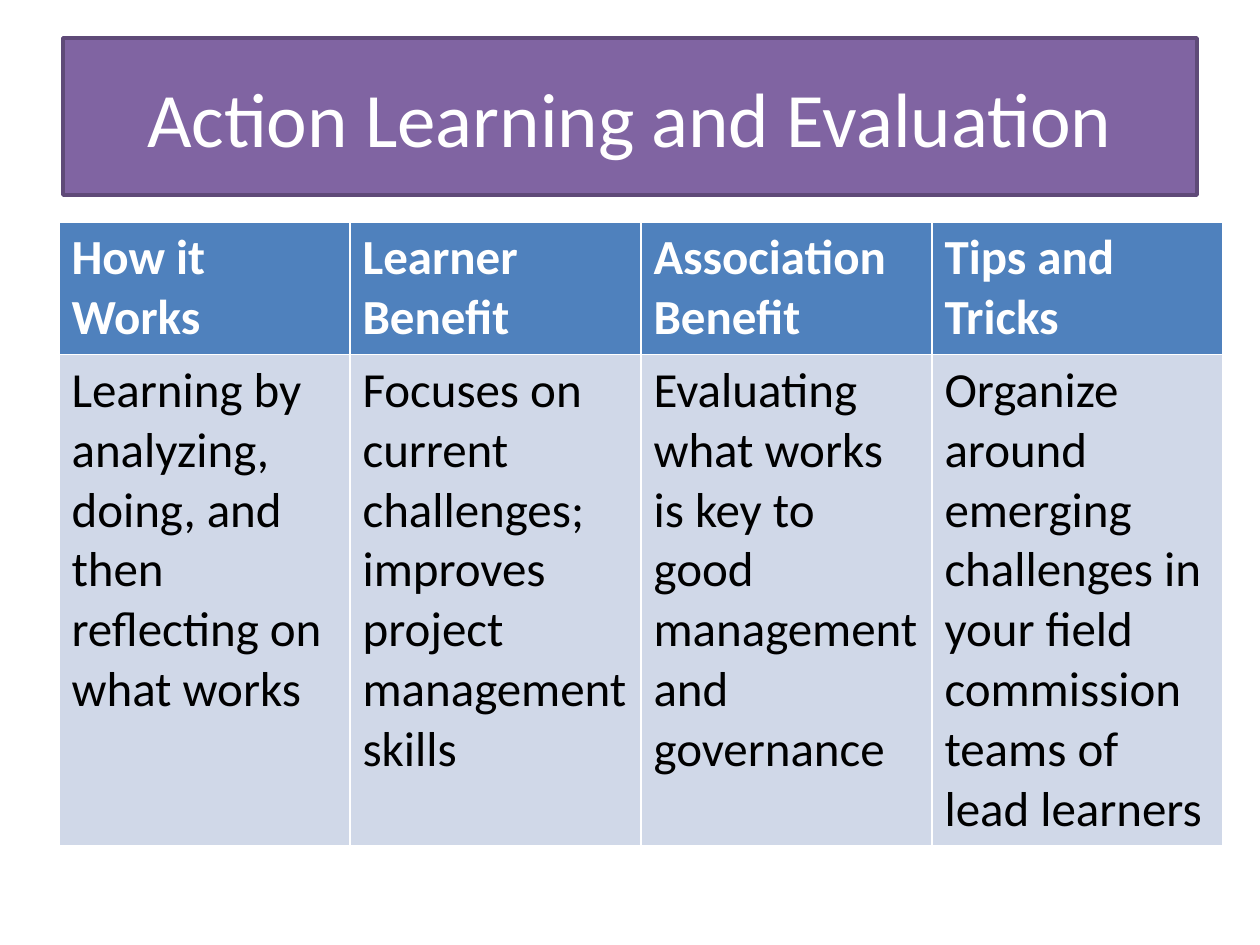
from pptx import Presentation
from pptx import util as u
from pptx.dml import color
from pptx.enum import text

SCALE = 914400 / 126
COLORS = {
    "title_fill": "8064A2",
    "title_line": "5F4A78",
    "header_fill": "4F81BD",
    "body_fill": "D0D8E8",
    "light": "FFFFFF",
    "dark": "000000",
}
TITLE_FONT = {"name": "Calibri", "size": u.Pt(44), "bold": False}
HEADER_FONT = {"name": "Calibri", "size": u.Pt(28), "bold": True}
BODY_FONT = {**HEADER_FONT, "bold": False}
COLUMN_WIDTH = 291
ROW_HEIGHTS = [131, 491]
COLUMNS = [
    ("How it Works",
     "Learning by analyzing, doing, and then reflecting on what works"),
    ("Learner Benefit",
     "Focuses on current challenges; improves project management skills"),
    ("Association Benefit",
     "Evaluating what works is key to good\nmanagement and governance"),
    ("Tips and Tricks",
     "Organize around emerging challenges in your field commission teams of lead learners"),
]


def px(length):
    return u.Emu(round(length * SCALE))


def rgb(name):
    return color.RGBColor.from_string(COLORS[name])


def set_fill(target, name):
    target.fill.solid()
    target.fill.fore_color.rgb = rgb(name)


def write_text(frame, content, font, color_name, alignment):
    frame.text = content
    for paragraph in frame.paragraphs:
        paragraph.alignment = alignment
        for run in paragraph.runs:
            for attribute, value in font.items():
                setattr(run.font, attribute, value)
            run.font.color.rgb = rgb(color_name)


def add_title(slide, content, left, top, width, height):
    title = slide.shapes.title
    box = {"left": left, "top": top, "width": width, "height": height}
    for attribute, value in box.items():
        setattr(title, attribute, px(value))
    set_fill(title, "title_fill")
    title.line.color.rgb = rgb("title_line")
    title.line.width = u.Pt(2)
    title.text_frame.vertical_anchor = text.MSO_ANCHOR.MIDDLE
    write_text(title.text_frame, content, TITLE_FONT, "light", text.PP_ALIGN.CENTER)


def add_comparison_table(slide, left, top):
    table = slide.shapes.add_table(
        len(ROW_HEIGHTS), len(COLUMNS), px(left), px(top),
        px(COLUMN_WIDTH * len(COLUMNS)), px(sum(ROW_HEIGHTS))).table
    for row, height in zip(table.rows, ROW_HEIGHTS):
        row.height = px(height)
    row_formats = [
        ("header_fill", HEADER_FONT, "light"),
        ("body_fill", BODY_FONT, "dark"),
    ]
    for column, contents in enumerate(COLUMNS):
        table.columns[column].width = px(COLUMN_WIDTH)
        for row, (fill, font, color_name) in enumerate(row_formats):
            cell = table.cell(row, column)
            set_fill(cell, fill)
            write_text(cell.text_frame, contents[row], font, color_name,
                       text.PP_ALIGN.LEFT)


def main():
    presentation = Presentation()
    presentation.slide_width = px(1260)
    presentation.slide_height = px(945)
    slide = presentation.slides.add_slide(presentation.slide_layouts[5])
    add_title(slide, "Action Learning and Evaluation", 63, 38, 1134, 157)
    add_comparison_table(slide, 59, 222)
    presentation.save("out.pptx")


if __name__ == "__main__":
    main()
